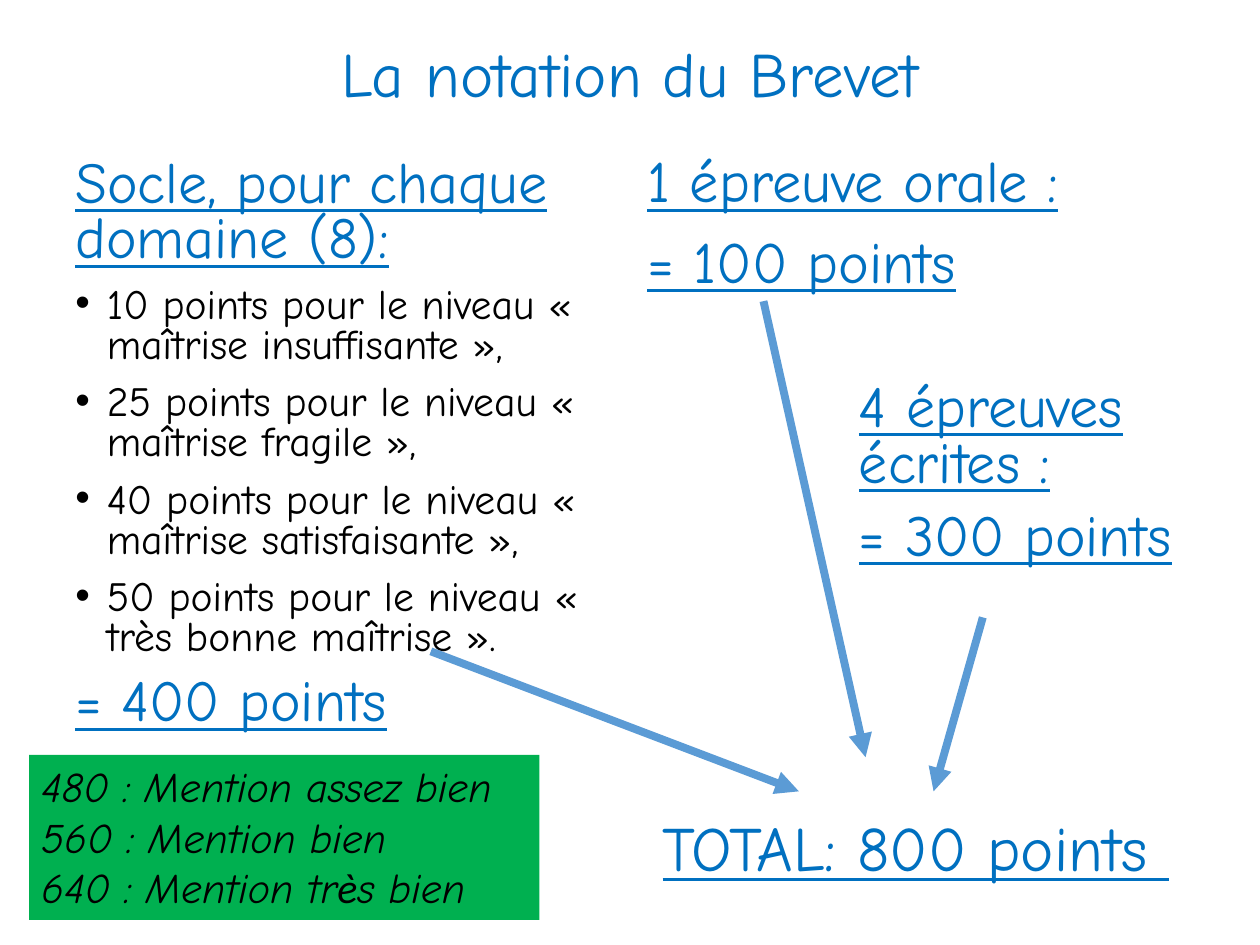
import pptx
import pptx.util
import pptx.dml.color
import pptx.enum.shapes
import pptx.enum.text
import pptx.oxml
import pptx.oxml.ns
import lxml.etree

Pt = pptx.util.Pt
Align = pptx.enum.text.PP_ALIGN
Anchor = pptx.enum.text.MSO_ANCHOR
Fit = pptx.enum.text.MSO_AUTO_SIZE


class Theme:
    font, spare = "Comic Neue", "Calibri"
    blue, black, green, arrow = "0070C0", "000000", "00B050", "5B9BD5"
    big, head, oral, note, item = 36, 33.1, 33.3, 24, 23.8
    stroke, gap, indent = 4.5, 10, 18


def tint(code):
    return pptx.dml.color.RGBColor.from_string(code)


def apply(target, values):
    for name, value in values.items():
        setattr(target, name, value)


def node(parent, tag, **values):
    return lxml.etree.SubElement(parent, pptx.oxml.ns.qn(tag), values)


class Maker:
    """Draws text, boxes and arrows on one slide in one style."""

    def __init__(self, slide, theme):
        self.slide, self.theme = slide, theme

    def fill(self, frame, paras, size, color, font=None, para=None, bullet=False, start=0):
        for index, runs in enumerate(paras, start):
            line = frame.add_paragraph() if index else frame.paragraphs[0]
            apply(line, {"alignment": Align.LEFT, **(para or {})})
            if bullet:
                self.mark(line)
            for part in [runs] if isinstance(runs, str) else runs:
                text, face = (part, self.theme.font) if isinstance(part, str) else part
                run = line.add_run()
                run.text = text
                apply(run.font, {"name": face, "size": Pt(size), **(font or {})})
                run.font.color.rgb = tint(color)

    def mark(self, line):
        props = line._p.get_or_add_pPr()
        step = Pt(self.theme.indent)
        apply_marks = {"marL": step, "indent": -step}
        for name, value in apply_marks.items():
            props.set(name, str(value))
        node(props, "a:buFont", typeface="Arial")
        node(props, "a:buChar", char="•")

    def text(self, place, paras, size, font=None, para=None, **frame):
        box = self.slide.shapes.add_textbox(*map(Pt, place)).text_frame
        apply(box, {"word_wrap": True, "auto_size": Fit.NONE, **frame})
        self.fill(box, paras, size, self.theme.blue, font, para)
        return box

    def box(self, place, paras, size, font):
        kind = pptx.enum.shapes.MSO_SHAPE.RECTANGLE
        shape = self.slide.shapes.add_shape(kind, *map(Pt, place))
        shape.shadow.inherit = False
        shape.fill.solid()
        shape.fill.fore_color.rgb = tint(self.theme.green)
        shape.line.fill.background()
        apply(shape.text_frame, {"word_wrap": True, "vertical_anchor": Anchor.TOP,
                                 "auto_size": Fit.SHAPE_TO_FIT_TEXT})
        self.fill(shape.text_frame, paras, size, self.theme.black, font)

    def arrow(self, *ends):
        kind = pptx.enum.shapes.MSO_CONNECTOR.STRAIGHT
        line = self.slide.shapes.add_connector(kind, *map(Pt, ends))
        line.line.color.rgb = tint(self.theme.arrow)
        line.line.width = Pt(self.theme.stroke)
        node(line.line._get_or_add_ln(), "a:tailEnd", type="triangle")
        node(line._element.spPr, "a:effectLst")


def main():
    deck = pptx.Presentation()
    apply(deck, {"slide_width": Pt(720), "slide_height": Pt(540)})
    theme = Theme()
    make = Maker(deck.slides.add_slide(deck.slide_layouts[6]), theme)
    under = {"underline": True}
    tight = {"line_spacing": 0.8, "space_before": Pt(theme.gap)}
    loose = {**tight, "line_spacing": 0.9}

    make.text((0, 1.4, 720, 85), ["La notation du Brevet"], theme.big,
              para={"alignment": Align.CENTER, "line_spacing": 0.9},
              vertical_anchor=Anchor.MIDDLE)

    levels = {10: "maîtrise insuffisante »,", 25: "maîtrise fragile »,",
              40: "maîtrise satisfaisante »,", 50: "très bonne maîtrise »."}
    items = [f"{mark} points pour le niveau « {level}" for mark, level in levels.items()]
    base = make.text((36, 87.1, 326.2, 374.4), ["Socle, pour chaque domaine (8):"],
                     theme.head, under, tight)
    make.fill(base, items, theme.item, theme.black, para=tight, bullet=True, start=1)
    make.fill(base, ["= 400 points"], theme.head, theme.blue, under, tight, start=5)

    make.text((483.8, 215.3, 225.4, 144.7), ["4 épreuves écrites :", "= 300 points"],
              theme.head, under, tight)
    make.text((371.5, 458.6, 352.1, 51), ["TOTAL: 800 points "], theme.big, under,
              word_wrap=False, auto_size=Fit.SHAPE_TO_FIT_TEXT)
    make.arrow(436.3, 172.1, 494.6, 432.7)
    make.arrow(246.2, 372.2, 456.5, 452.2)
    make.text((362.9, 83.5, 288, 118.8), ["1 épreuve orale :", "= 100 points"],
              theme.oral, under, loose)
    make.arrow(561.6, 352.8, 533.5, 452.2)
    make.box((16.6, 431.3, 291.6, 94.3),
             ["480 : Mention assez bien", "560 : Mention bien",
              ["640 : Mention tr", ("è", theme.spare), "s bien"]],
             theme.note, {"italic": True})
    deck.save("out.pptx")


if __name__ == "__main__":
    main()
